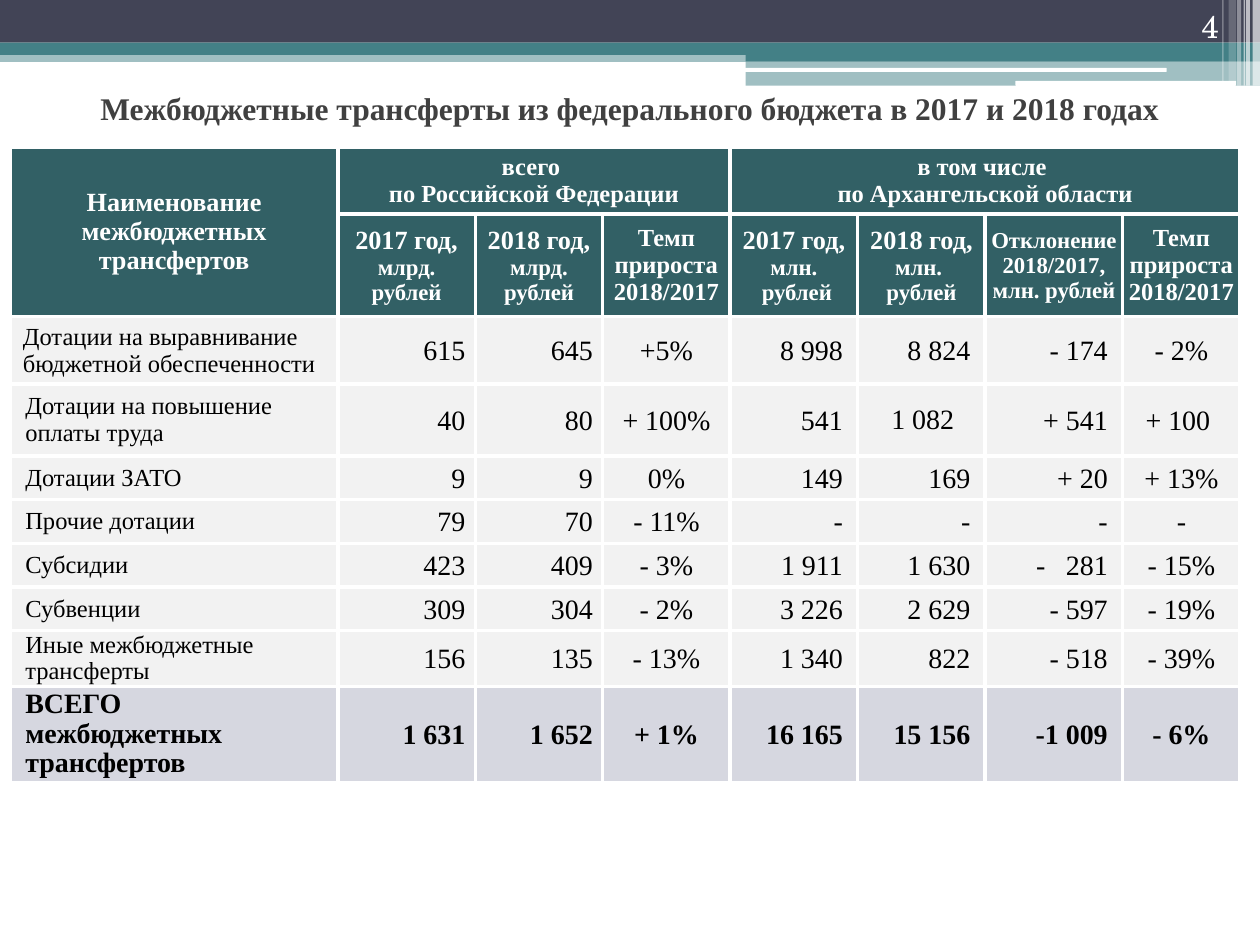
from lxml.etree import SubElement
from pptx import Presentation
from pptx.dml.color import RGBColor
from pptx.enum.shapes import MSO_SHAPE as SHAPE
from pptx.enum.text import MSO_ANCHOR as ANCHOR, PP_ALIGN as ALIGN
from pptx.oxml.ns import qn
from pptx.util import Cm, Pt

THEME = {
    "body_font": "Times New Roman", "number_font": "TeX Gyre Schola",
    "navy": "424456", "teal": "438086", "white": "FFFFFF", "black": "000000",
    "title": "404040", "header": "326065", "row": "F2F2F2", "total": "D6D7E0",
    "title_size": 18, "value_size": 16, "name_size": 14,
    "border": 2.25, "tight_spacing": 0.95,
}
TITLE = "Межбюджетные трансферты из федерального бюджета в 2017 и 2018 годах"
PAGE = "4"

# left, top, width, height (cm), colour, opacity in percent, rounded
BANDS = [
    (0, 1.02, 25.4, 0.23, "teal", 50, False),
    (0, 0, 25.4, 0.86, "navy", 100, False),
    (0, 0.86, 25.4, 0.25, "teal", 100, False),
    (15.03, 0.99, 10.37, 0.24, "teal", 100, False),
    (15.03, 1.23, 10.37, 0.5, "teal", 50, False),
    (15.01, 1.37, 8.51, 0.08, "white", 100, True),
    (20.47, 1.63, 4.45, 0.1, "white", 100, True),
]
# left, width, height (cm), opacity
STRIPES = [
    (25.25, 0.15, 1.73, 65), (25.12, 0.08, 1.73, 65), (25.07, 0.03, 1.73, 60),
    (24.94, 0.08, 1.73, 40), (24.77, 0.15, 1.63, 20), (24.64, 0.03, 1.63, 30),
]

# row, column, rows spanned, columns spanned, paragraphs of (text, size) runs
HEADERS = [
    (0, 0, 2, 1, [[("Наименование межбюджетных трансфертов", 15)]]),
    (0, 1, 1, 3, [[("всего ", 14)], [("по Российской Федерации", 14)]]),
    (0, 4, 1, 4, [[("в том числе ", 14)], [("по Архангельской области", 14)]]),
    (1, 1, 1, 1, [[("2017 год, ", 15), ("млрд. рублей", 13)]]),
    (1, 2, 1, 1, [[("2018 год, ", 15), ("млрд. рублей", 13)]]),
    (1, 3, 1, 1, [[("Темп прироста 2018/2017", 14)]]),
    (1, 4, 1, 1, [[("2017 год, ", 15), ("млн.", 13)], [(" рублей", 13)]]),
    (1, 5, 1, 1, [[("2018 год, ", 15), ("млн. ", 13)], [("рублей", 13)]]),
    (1, 6, 1, 1, [[("Отклонение 2018/2017, млн. рублей", 13)]]),
    (1, 7, 1, 1, [[("Темп прироста 2018/2017", 14)]]),
]
ROWS = [
    ("Дотации на выравнивание бюджетной обеспеченности",
     "615", "645", "+5%", "8 998", "8 824", "- 174", "- 2%"),
    ("Дотации на повышение оплаты труда",
     "40", "80", "+ 100%", "541", "1 082", "+ 541", "+ 100 "),
    ("Дотации ЗАТО", "9", "9", "0%", "149", "169", "+ 20", "+ 13%"),
    ("Прочие дотации", "79", "70", "- 11%", "-", "-", "-", "-"),
    ("Субсидии", "423", "409", "- 3%", "1 911", "1 630", "281", "- 15%"),
    ("Субвенции", "309", "304", "- 2%", "3 226", "2 629", "- 597", "- 19%"),
    ("Иные межбюджетные трансферты",
     "156", "135", "- 13%", "1 340", "822", "- 518", "- 39%"),
    ("ВСЕГО\nмежбюджетных трансфертов",
     "1 631", "1 652", "+ 1%", "16 165", "15 156", "-1 009", "- 6%"),
]
COL_WIDTHS = [6.6, 2.77, 2.57, 2.57, 2.57, 2.57, 2.77, 2.37]
ROW_HEIGHTS = [1.33, 2.01, 1.36, 1.45, 0.88, 0.88, 0.88, 0.88, 1.09, 1.84]
TABLE_LEFT, TABLE_TOP = 0.21, 2.97
RATE_COLS = (3, 7)
TIGHT_ROWS = (6, 7)
CENTRED_VALUE, DASH_BULLET = "1 082", "281"


def colour(name):
    return RGBColor.from_string(THEME[name])


def add_band(slide, left, top, width, height, fill, opacity, rounded=False):
    kind = SHAPE.ROUNDED_RECTANGLE if rounded else SHAPE.RECTANGLE
    sp = slide.shapes.add_shape(kind, Cm(left), Cm(top), Cm(width), Cm(height))
    sp.shadow.inherit = False
    sp.line.fill.background()
    sp.fill.solid()
    sp.fill.fore_color.rgb = colour(fill)
    if opacity < 100:
        clr = sp.fill._xPr.find(qn("a:solidFill"))[0]
        SubElement(clr, qn("a:alpha")).set("val", str(opacity * 1000))


def write(tf, paragraphs, align, ink, bold=False, font="body_font"):
    """Fill a text frame with paragraphs, each a list of (text, size) runs."""
    for i, runs in enumerate(paragraphs):
        p = tf.paragraphs[0] if i == 0 else tf.add_paragraph()
        p.alignment = align
        for text, size in runs:
            r = p.add_run()
            r.text = text
            style = {"name": THEME[font], "size": Pt(size), "bold": bold}
            for key, value in style.items():
                setattr(r.font, key, value)
            r.font.color.rgb = colour(ink)


def add_label(slide, box, text, align, anchor, **style):
    tf = slide.shapes.add_textbox(*map(Cm, box)).text_frame
    tf.word_wrap = True
    tf.vertical_anchor = anchor
    write(tf, [[(text, THEME["title_size"])]], align, **style)


def format_cell(cell, fill, margins):
    """Set fill, margins (left, top, right, bottom in cm) and white borders."""
    cell.vertical_anchor = ANCHOR.MIDDLE
    for side, value in zip(("left", "top", "right", "bottom"), margins):
        setattr(cell, f"margin_{side}", Cm(value))
    tc_pr = cell._tc.get_or_add_tcPr()
    for tag in ("a:lnL", "a:lnR", "a:lnT", "a:lnB"):
        ln = SubElement(tc_pr, qn(tag), w=str(Pt(THEME["border"])))
        clr = SubElement(ln, qn("a:solidFill"))
        SubElement(clr, qn("a:srgbClr")).set("val", THEME["white"])
    cell.fill.solid()
    cell.fill.fore_color.rgb = colour(fill)


def add_dash_bullet(p):
    p_pr = p._p.get_or_add_pPr()
    p_pr.set("marL", str(Cm(0.6)))
    p_pr.set("indent", str(-Cm(0.6)))
    SubElement(p_pr, qn("a:buFont")).set("typeface", THEME["body_font"])
    SubElement(p_pr, qn("a:buChar")).set("char", "-")


def value_layout(text, col):
    """Return alignment and margins of a figure in the given column."""
    if col in RATE_COLS:
        return ALIGN.CENTER, (0.03, 0.03, 0.03, 0)
    if text == CENTRED_VALUE:
        return ALIGN.CENTER, (0.05, 0, 0, 0)
    return ALIGN.RIGHT, (0.03, 0.03, 0.2 if col < 3 else 0.3, 0)


def add_transfers_table(slide):
    tbl = slide.shapes.add_table(
        len(ROW_HEIGHTS), len(COL_WIDTHS), Cm(TABLE_LEFT), Cm(TABLE_TOP),
        Cm(sum(COL_WIDTHS)), Cm(sum(ROW_HEIGHTS))).table
    tbl.first_row = tbl.horz_banding = False
    for column, width in zip(tbl.columns, COL_WIDTHS):
        column.width = Cm(width)
    for row, height in zip(tbl.rows, ROW_HEIGHTS):
        row.height = Cm(height)

    for row in range(2):
        for col in range(len(COL_WIDTHS)):
            side = 0.1 if col else 0.25
            format_cell(tbl.cell(row, col), "header", (side, 0.08, side, 0.08))
    for row, col, down, across, paragraphs in HEADERS:
        cell = tbl.cell(row, col)
        if down * across > 1:
            cell.merge(tbl.cell(row + down - 1, col + across - 1))
        write(cell.text_frame, paragraphs, ALIGN.CENTER, "white", bold=True)

    for i, (name, *values) in enumerate(ROWS):
        total = i == len(ROWS) - 1
        fill = "total" if total else "row"
        size = THEME["value_size" if total else "name_size"]
        cell = tbl.cell(i + 2, 0)
        format_cell(cell, fill, (0.3 if i else 0.25, 0, 0, 0))
        lines = [[(line, size)] for line in name.split("\n")]
        write(cell.text_frame, lines, ALIGN.LEFT, "black", total)
        if i in TIGHT_ROWS:
            for p in cell.text_frame.paragraphs:
                p.line_spacing = THEME["tight_spacing"]
        for col, text in enumerate(values, 1):
            cell = tbl.cell(i + 2, col)
            align, margins = value_layout(text, col)
            format_cell(cell, fill, margins)
            write(cell.text_frame, [[(text, THEME["value_size"])]], align,
                  "black", total)
            if text == DASH_BULLET:
                add_dash_bullet(cell.text_frame.paragraphs[0])


def main():
    prs = Presentation()
    prs.slide_width, prs.slide_height = Cm(25.4), Cm(19.05)
    slide = prs.slides.add_slide(prs.slide_layouts[6])
    for band in BANDS:
        add_band(slide, *band)
    for left, width, height, opacity in STRIPES:
        add_band(slide, left, 0, width, height, "white", opacity)
    add_label(slide, (22.7, 0, 2.12, 1.02), PAGE, ALIGN.RIGHT, ANCHOR.BOTTOM,
              ink="white", font="number_font")
    add_transfers_table(slide)
    add_label(slide, (0, 1.57, 25.4, 1.2), TITLE, ALIGN.CENTER, ANCHOR.MIDDLE,
              ink="title", bold=True)
    prs.save("out.pptx")


if __name__ == "__main__":
    main()
